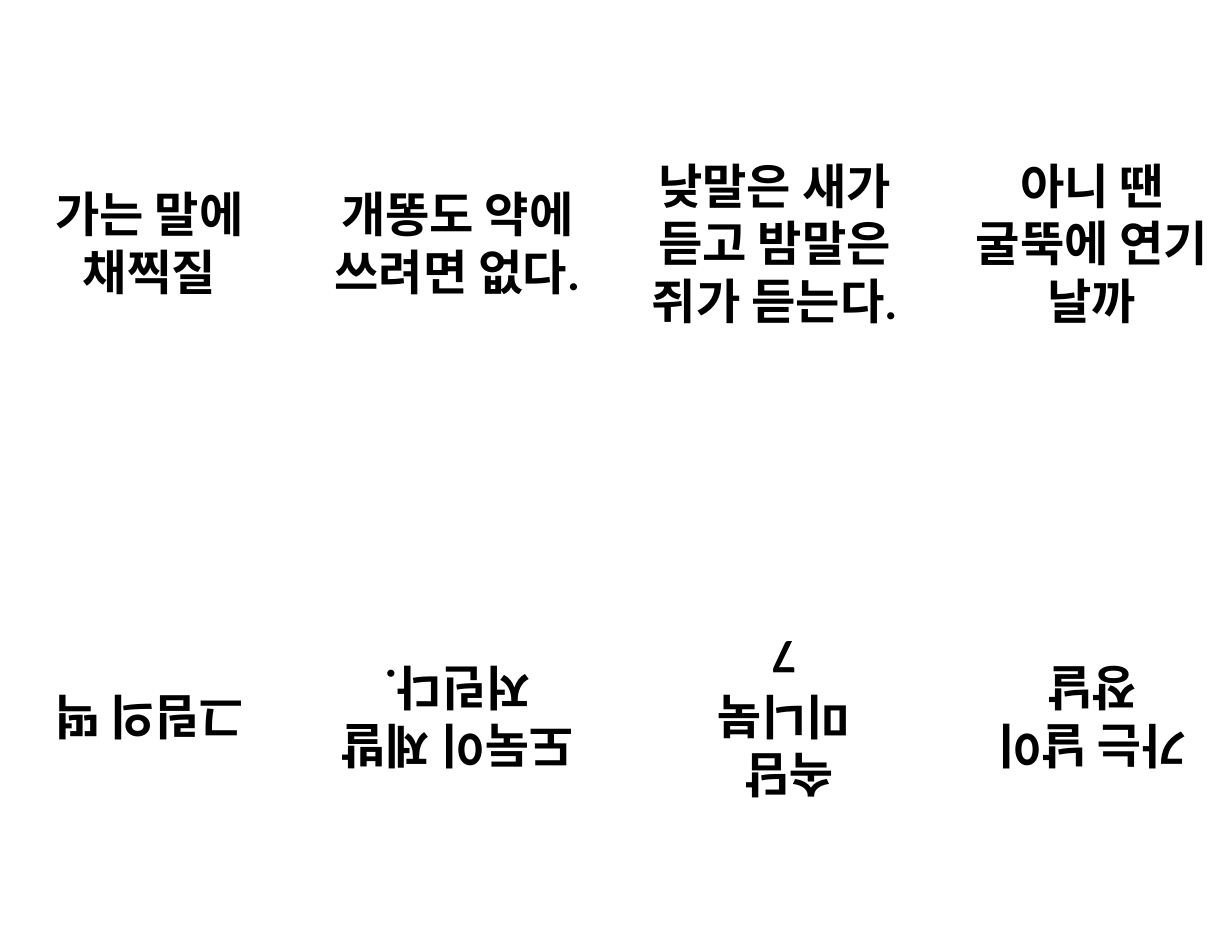
from dataclasses import dataclass

from pptx import Presentation
from pptx.dml.color import RGBColor
from pptx.enum.dml import MSO_LINE
from pptx.enum.shapes import MSO_SHAPE
from pptx.enum.text import MSO_ANCHOR, PP_ALIGN
from pptx.util import Pt


@dataclass(frozen=True)
class Theme:
    paper: RGBColor = RGBColor(0xFF, 0xFF, 0xFF)
    ink: RGBColor = RGBColor(0, 0, 0)
    font: str = "Calibri"
    size: Pt = Pt(31)
    fold_line: Pt = Pt(0.25)


theme = Theme()
PAGE_WIDTH, PAGE_HEIGHT = 180, 288
COLUMNS = (6, 204, 408, 612)
COVER_SHIFT = 6  # the cover sits slightly right of its column

# Each row of the folded booklet: top, rotation, pages as lists of paragraphs
ROWS = (
    (12, 0, (
        ["가는 말에 채찍질"],
        ["개똥도 약에 쓰려면 없다."],
        ["낮말은 새가 듣고 밤말은 쥐가 듣는다."],
        ["아니 땐 굴뚝에 연기 날까"],
    )),
    (318, 180, (
        ["그림의 떡"],
        ["도둑이 제발 저린다."],
        ["속담 ", "미니북", "7"],
        ["가는 날이 장날"],
    )),
)

booklet = Presentation()
booklet.slide_width, booklet.slide_height = Pt(792), Pt(612)
sheet = booklet.slides.add_slide(booklet.slide_layouts[6])

for top, rotation, pages in ROWS:
    for column, paragraphs in zip(COLUMNS, pages):
        is_cover = len(paragraphs) > 1
        left = column + (COVER_SHIFT if is_cover else 0)
        page = sheet.shapes.add_shape(
            MSO_SHAPE.RECTANGLE, Pt(left), Pt(top), Pt(PAGE_WIDTH), Pt(PAGE_HEIGHT))
        page.rotation = rotation
        page.shadow.inherit = False
        page.fill.solid()
        page.fill.fore_color.rgb = theme.paper
        page.line.color.rgb = theme.paper
        page.line.width = theme.fold_line
        page.line.dash_style = MSO_LINE.DASH

        frame = page.text_frame
        frame.word_wrap = True
        frame.vertical_anchor = MSO_ANCHOR.MIDDLE
        frame.margin_left = frame.margin_right = Pt(8)
        frame.margin_top = frame.margin_bottom = Pt(4)
        for index, words in enumerate(paragraphs):
            paragraph = frame.add_paragraph() if index else frame.paragraphs[0]
            paragraph.alignment = PP_ALIGN.CENTER
            run = paragraph.add_run()
            run.text = words
            run.font.name = theme.font
            run.font.size = theme.size
            run.font.bold = True
            run.font.color.rgb = theme.ink

booklet.save("out.pptx")
